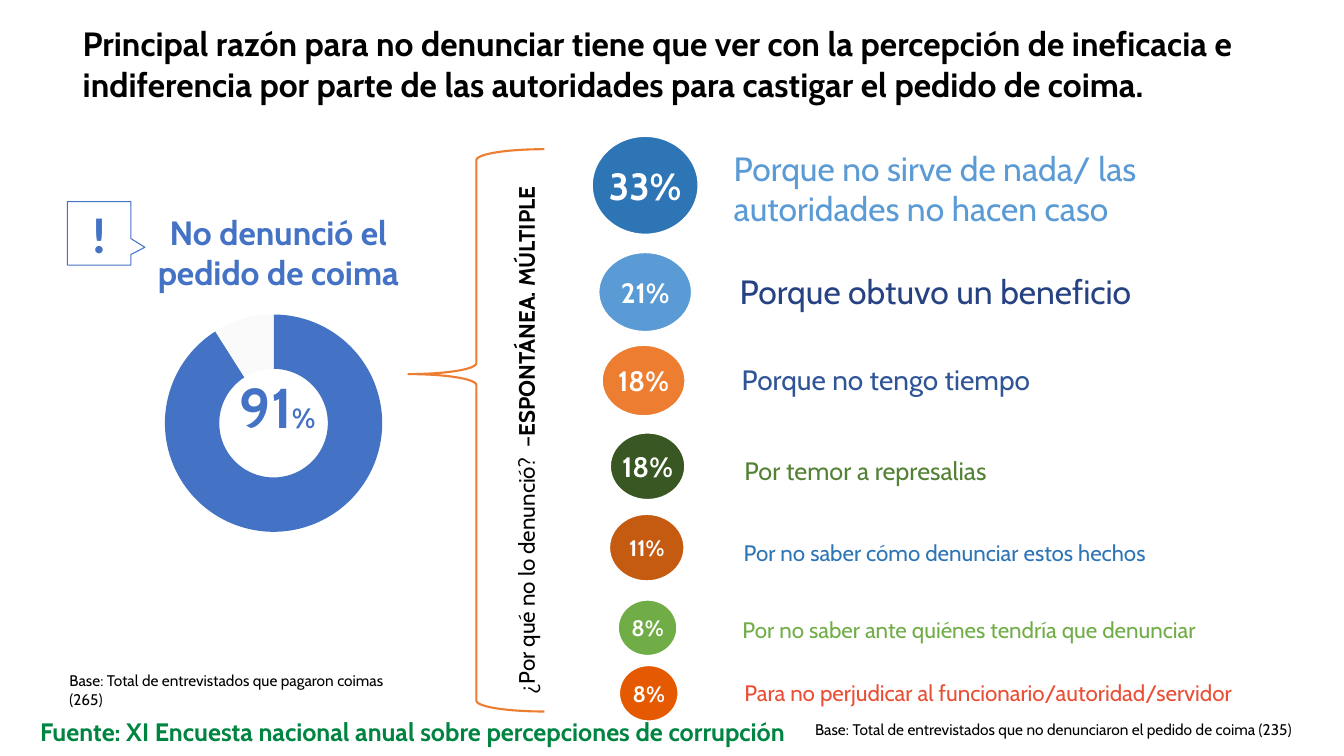
from lxml.etree import SubElement
from pptx import Presentation
from pptx.chart.data import CategoryChartData
from pptx.dml.color import RGBColor
from pptx.enum.chart import XL_CHART_TYPE
from pptx.enum.shapes import MSO_SHAPE
from pptx.enum.text import MSO_ANCHOR, MSO_AUTO_SIZE, PP_ALIGN
from pptx.oxml.ns import qn
from pptx.util import Cm, Pt

FONT = "Cabin"
BLACK = RGBColor(0x00, 0x00, 0x00)
WHITE = RGBColor(0xFF, 0xFF, 0xFF)
PALE = RGBColor(0xFA, 0xFA, 0xFA)
ROYAL = RGBColor(0x44, 0x72, 0xC4)
BLUE = RGBColor(0x2E, 0x75, 0xB6)
SKY = RGBColor(0x5B, 0x9B, 0xD5)
NAVY = RGBColor(0x26, 0x42, 0x83)
INDIGO = RGBColor(0x2F, 0x55, 0x97)
ORANGE = RGBColor(0xED, 0x7D, 0x31)
RUST = RGBColor(0xC5, 0x5A, 0x11)
FLAME = RGBColor(0xE5, 0x5A, 0x00)
RED = RGBColor(0xE9, 0x4F, 0x35)
FOREST = RGBColor(0x38, 0x57, 0x23)
MOSS = RGBColor(0x54, 0x82, 0x35)
LEAF = RGBColor(0x70, 0xAD, 0x47)
GREEN = RGBColor(0x00, 0x84, 0x42)

# bubble: share, fill, width, height, centre x and y, size
# label: words, colour, size, left, top, width, height
REASONS = [
    ("33%", BLUE, 2.69, 2.49, 1.36, 1.27, 27,
     "Porque no sirve de nada/ las autoridades no hacen caso",
     SKY, 24, 3.34, 0.2, 11.66, 2.31),
    ("21%", SKY, 2.36, 2.01, 1.36, 3.96, 20,
     "Porque obtuvo un beneficio", NAVY, 24, 3.49, 3.3, 12.12, 1.27),
    ("18%", ORANGE, 2.11, 1.8, 1.32, 6.19, 20,
     "Porque no tengo tiempo", INDIGO, 20, 3.54, 5.62, 12.32, 1.12),
    ("18%", FOREST, 1.9, 1.7, 1.42, 8.35, 20,
     "Por temor a represalias", MOSS, 18, 3.61, 7.95, 11.56, 1.02),
    ("11%", RUST, 1.9, 1.7, 1.4, 10.4, 16,
     "Por no saber cómo denunciar estos hechos", BLUE, 16, 3.59, 10.06, 11.15, 0.94),
    ("8%", LEAF, 1.5, 1.42, 1.42, 12.42, 16,
     "Por no saber ante quiénes tendría que denunciar",
     LEAF, 16, 3.56, 11.99, 12.88, 0.94),
    ("8%", FLAME, 1.5, 1.42, 1.45, 14.07, 16,
     "Para no perjudicar al funcionario/autoridad/servidor",
     RED, 16, 3.61, 13.59, 12.88, 0.94),
]


def style(run, size, color, bold=False, font=FONT):
    run.font.name = font
    run.font.size = Pt(size)
    run.font.bold = bold
    run.font.color.rgb = color


def add_text(slide, box, words, size, color, bold=False, align=PP_ALIGN.LEFT, wrap=True):
    label = slide.shapes.add_textbox(*map(Cm, box))
    frame = label.text_frame
    frame.word_wrap = wrap
    frame.text = words
    para = frame.paragraphs[0]
    para.alignment = align
    style(para.runs[0], size, color, bold)
    return label


def add_form(slide, kind, box, fill, line, weight):
    form = slide.shapes.add_shape(kind, *map(Cm, box))
    form.shadow.inherit = False
    if fill is None:
        form.fill.background()
    else:
        form.fill.solid()
        form.fill.fore_color.rgb = fill
    form.line.color.rgb = line
    form.line.width = Pt(weight)
    return form


def fill_form(form, words, size, color, font=FONT):
    frame = form.text_frame
    frame.vertical_anchor = MSO_ANCHOR.MIDDLE
    frame.text = words
    para = frame.paragraphs[0]
    para.alignment = PP_ALIGN.CENTER
    style(para.runs[0], size, color, True, font)
    return para


def set_title(slide, left, top, width, height):
    title = slide.shapes.title
    title.left, title.top, title.width, title.height = map(Cm, (left, top, width, height))
    frame = title.text_frame
    frame.text = ("Principal razón para no denunciar tiene que ver con la percepción de "
                  "ineficacia e indiferencia por parte de las autoridades para castigar "
                  "el pedido de coima.")
    frame.auto_size = MSO_AUTO_SIZE.NONE
    frame.vertical_anchor = MSO_ANCHOR.TOP
    frame.paragraphs[0].alignment = PP_ALIGN.LEFT
    style(frame.paragraphs[0].runs[0], 24, BLACK, True)


def add_ring(slide, left, top, width, height):
    data = CategoryChartData()
    data.categories = ["1", "2"]
    data.add_series("Series 1", (91, 9))
    chart = slide.shapes.add_chart(
        XL_CHART_TYPE.DOUGHNUT, *map(Cm, (left, top, width, height)), data).chart
    chart.has_legend = chart.has_title = False
    chart.font.name = "Calibri"
    chart.font.size = Pt(18)
    chart.font.color.rgb = BLACK
    plot = chart.plots[0]
    plot.vary_by_categories = False
    for i, color in enumerate((ROYAL, PALE)):
        fill = plot.series[0].points[i].format.fill
        fill.solid()
        fill.fore_color.rgb = color

    area = chart.element.find(".//" + qn("c:plotArea"))
    area.find(".//" + qn("c:holeSize")).set("val", "76")
    layout = area.find(qn("c:layout"))
    if layout is None:
        layout = SubElement(area, qn("c:layout"))
        area.insert(0, layout)
    manual = SubElement(layout, qn("c:manualLayout"))
    for tag, val in (("layoutTarget", "inner"), ("xMode", "edge"), ("yMode", "edge"),
                     ("x", "0.1"), ("y", "0.01"), ("w", "0.8"), ("h", "0.98")):
        SubElement(manual, qn("c:" + tag)).set("val", val)


def add_share(slide, left, top):
    """Place the callout, heading, ring and base of the non-reporting share."""
    add_ring(slide, left + 1.27, top + 2.79, 7.85, 5.59)
    share = add_text(slide, (left + 3.43, top + 3.3, 3.73, 3.73), "91", 40, ROYAL, True,
                     PP_ALIGN.CENTER, False)
    share.text_frame.vertical_anchor = MSO_ANCHOR.MIDDLE
    sign = share.text_frame.paragraphs[0].add_run()
    sign.text = "%"
    style(sign, 20, ROYAL, True)
    add_text(slide, (left + 1.91, top + 0.13, 6.81, 2.31), "No denunció el pedido de coima",
             24, ROYAL, True, PP_ALIGN.CENTER)
    call = add_form(slide, MSO_SHAPE.RECTANGULAR_CALLOUT, (left, top, 1.6, 1.6),
                    WHITE, ROYAL, 0.75)
    call.adjustments[0], call.adjustments[1] = 0.72, 0.22
    fill_form(call, "!", 36, ROYAL, "Calibri")
    add_text(slide, (left - 0.2, top + 11.71, 9.32, 0.74),
             "Base: Total de entrevistados que pagaron coimas (265)", 11, BLACK)


def add_query(slide, left, top, width, height):
    """Place the brace and the question that reads upwards beside it."""
    brace = add_form(slide, MSO_SHAPE.LEFT_BRACE, (left, top, width, height),
                     None, ORANGE, 1.5)
    brace.adjustments[0], brace.adjustments[1] = 0.08, 0.4
    span, deep = 14, 0.94
    mid, foot = left + 2.97, top + 13.98
    query = add_text(slide, (mid - span / 2, foot - span / 2 - deep / 2, span, deep),
                     "¿Por qué no lo denunció?  –", 16, BLACK)
    query.rotation = 270
    tail = query.text_frame.paragraphs[0].add_run()
    tail.text = "ESPONTÁNEA. MÚLTIPLE"
    style(tail, 16, BLACK, True)


def add_reasons(slide, left, top):
    """Place each bubble with its label on the right."""
    for share, fill, wide, high, midx, midy, size, words, color, point, x, y, w, h in REASONS:
        box = (left + midx - wide / 2, top + midy - high / 2, wide, high)
        bubble = add_form(slide, MSO_SHAPE.OVAL, box, fill, WHITE, 1.5)
        para = fill_form(bubble, share, size, WHITE)
        para.space_before = Pt(3)
        bubble.text_frame.margin_left = bubble.text_frame.margin_right = 0
        add_text(slide, (left + x, top + y, w, h), words, point, color)


def add_foot(slide, left, top):
    add_text(slide, (left, top, 19.33, 1.02),
             "Fuente: XI Encuesta nacional anual sobre percepciones de corrupción",
             18, GREEN, True, wrap=False)
    add_text(slide, (left + 19.53, top + 0.1, 12.8, 0.74),
             "Base: Total de entrevistados que no denunciaron el pedido de coima (235)",
             11, BLACK)


def main():
    deck = Presentation()
    deck.slide_width, deck.slide_height = Cm(33.87), Cm(19.05)
    slide = deck.slides.add_slide(deck.slide_layouts[5])
    set_title(slide, 1.83, 0.46, 31.6, 1.9)
    add_share(slide, 1.7, 5.08)
    add_query(slide, 10.29, 3.76, 3.43, 14.17)
    add_reasons(slide, 14.9, 3.4)
    add_foot(slide, 0.76, 17.93)
    deck.save("out.pptx")


if __name__ == "__main__":
    main()
